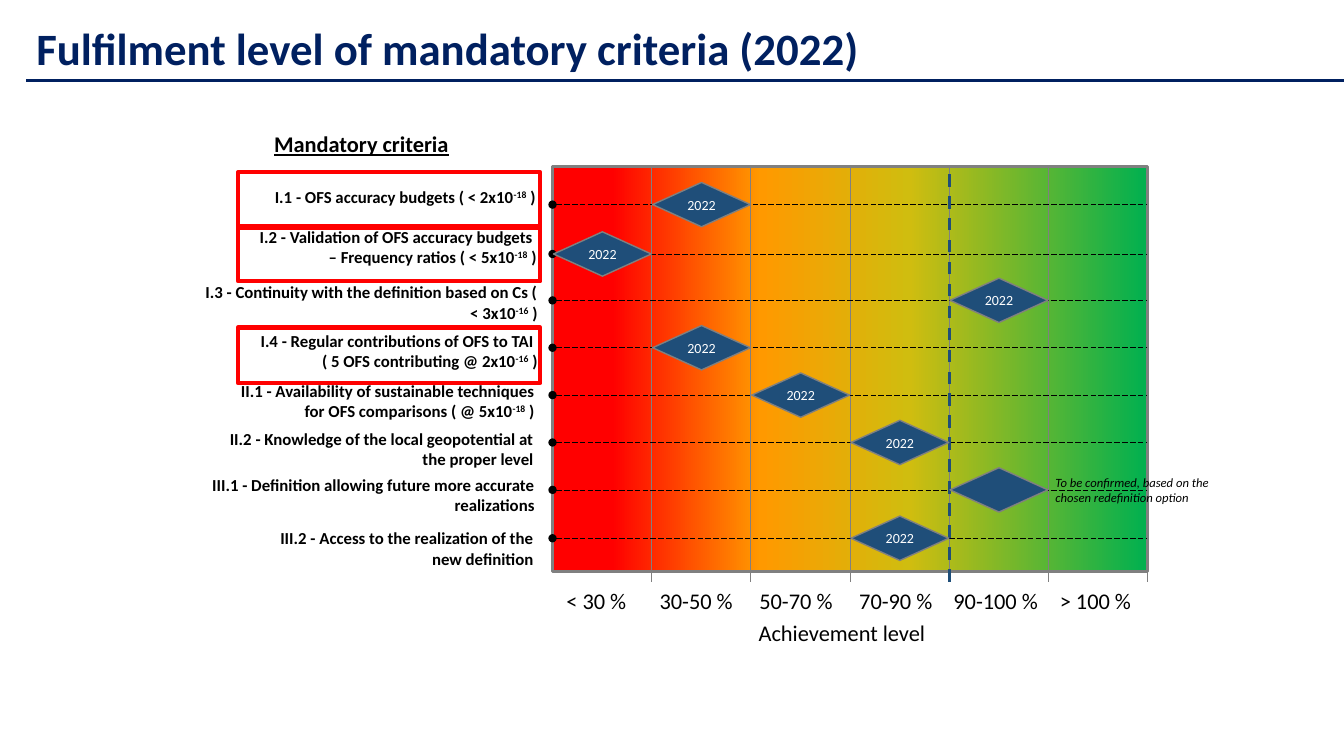
from dataclasses import dataclass

from lxml.etree import SubElement
from pptx import Presentation
from pptx.dml.color import RGBColor
from pptx.enum.dml import MSO_LINE
from pptx.enum.shapes import MSO_CONNECTOR, MSO_SHAPE
from pptx.enum.text import MSO_ANCHOR, PP_ALIGN
from pptx.oxml.ns import qn
from pptx.util import Inches, Pt


@dataclass(frozen=True)
class Theme:
    font: str = "Calibri"
    navy: str = "002060"
    black: str = "000000"
    white: str = "FFFFFF"
    gray: str = "808080"
    blue: str = "1F4E79"
    red: str = "FF0000"
    scale: tuple = ((10, "FF0000"), (35, "FF9900"), (60, "D0BD0F"), (100, "00B050"))
    title: int = 32
    head: int = 16
    label: int = 12
    mark: int = 10
    note: int = 9


THEME = Theme()
LEFT, TOP, WIDTH, HEIGHT = 5.48, 1.65, 5.9, 4.02
RIGHT, TICK = LEFT + WIDTH, 5.77
LEVELS = ["< 30 %", "30-50 %", "50-70 %", "70-90 %", "90-100 %", "> 100 %"]
STEP = WIDTH / len(LEVELS)
GOAL = 4
MARK_W, MARK_H = 0.97, 0.44
RED_TOPS = [1.71, 2.24, 3.25]

ROWS = [
    ([["I.1 - OFS accuracy budgets ( < 2x10", "^-18", " )"]],
     (2.53, 1.8, 2.88, 0.3), 2.03, 1, "2022"),
    ([["I.2 - Validation of OFS accuracy budgets "],
      ["– Frequency ratios ( < 5x10", "^-18", " )"]],
     (0.38, 2.2, 5.04, 0.64), 2.52, 0, "2022"),
    ([["I.3 - Continuity with the definition based on Cs ( < 3x10", "^-16", " )"]],
     (1.92, 2.75, 3.51, 0.5), 2.98, 4, "2022"),
    ([["I.4 - Regular contributions of OFS to TAI "],
      ["( 5 OFS contributing @ 2x10", "^-16", " )"]],
     (0.7, 3.23, 4.73, 0.71), 3.45, 1, "2022"),
    ([["II.1 - Availability of sustainable techniques for OFS comparisons ( @ 5x10",
       "^-18", " )"]],
     (2.2, 3.73, 3.2, 0.5), 3.92, 2, "2022"),
    ([["II.2 - Knowledge of the local geopotential at the proper level"]],
     (2.18, 4.2, 3.21, 0.5), 4.39, 3, "2022"),
    ([["III.1 - Definition allowing future more accurate realizations"]],
     (1.29, 4.66, 4.11, 0.5), 4.86, 4, ""),
    ([["III.2 - Access to the realization of the new definition"]],
     (2.43, 5.19, 2.96, 0.5), 5.34, 3, "2022"),
]


def color(code):
    return RGBColor.from_string(code)


def add_run(para, text, size, shade, bold=False, slant=False, under=False):
    run = para.add_run()
    run.text = text.lstrip("^")
    font = run.font
    font.name, font.size = THEME.font, Pt(size)
    font.bold, font.italic, font.underline = bold, slant, under
    font.color.rgb = color(shade)
    if text.startswith("^"):
        run._r.get_or_add_rPr().set("baseline", "30000")


def add_text(slide, spot, paras, size, align=PP_ALIGN.LEFT, **style):
    frame = slide.shapes.add_textbox(*map(Inches, spot)).text_frame
    frame.word_wrap = True
    for rank, parts in enumerate(paras):
        para = frame.add_paragraph() if rank else frame.paragraphs[0]
        para.alignment = align
        for part in parts:
            add_run(para, part, size, THEME.black, **style)


def add_form(slide, kind, spot, fill=None, line=None, width=1):
    form = slide.shapes.add_shape(kind, *map(Inches, spot))
    form.shadow.inherit = False
    if fill:
        form.fill.solid()
        form.fill.fore_color.rgb = color(fill)
    else:
        form.fill.background()
    if line:
        form.line.color.rgb = color(line)
        form.line.width = Pt(width)
    else:
        form.line.fill.background()
    return form


def add_scale(slide):
    form = add_form(slide, MSO_SHAPE.RECTANGLE, (LEFT, TOP, WIDTH, HEIGHT))
    form.fill.gradient()
    form.fill.gradient_angle = 0
    stops = form._element.spPr.find(qn("a:gradFill")).find(qn("a:gsLst"))
    for stop in list(stops):
        stops.remove(stop)
    for spot, code in THEME.scale:
        stop = SubElement(stops, qn("a:gs"), pos=str(spot * 1000))
        SubElement(stop, qn("a:srgbClr"), val=code)


def add_line(slide, start, end, code, width, dash=None, dot=False):
    line = slide.shapes.add_connector(
        MSO_CONNECTOR.STRAIGHT, *map(Inches, (*start, *end)))
    line.line.color.rgb = color(code)
    line.line.width = Pt(width)
    if dash:
        line.line.dash_style = dash
    props = line._element.spPr
    if dot:
        SubElement(props.find(qn("a:ln")), qn("a:headEnd"), type="oval")
    SubElement(props, qn("a:effectLst"))
    return line


def add_title(slide):
    title = slide.shapes.title
    title.left, title.top = Inches(0.26), Inches(0.16)
    title.width, title.height = Inches(12.89), Inches(0.64)
    frame = title.text_frame
    frame.vertical_anchor = MSO_ANCHOR.TOP
    para = frame.paragraphs[0]
    para.alignment = PP_ALIGN.LEFT
    add_run(para, "Fulfilment level of mandatory criteria (2022)",
            THEME.title, THEME.navy, bold=True)
    add_line(slide, (0.26, 0.8), (13.33, 0.8), THEME.navy, 2.25)


def add_grid(slide):
    add_scale(slide)
    frame = add_form(slide, MSO_SHAPE.RECTANGLE, (LEFT, TOP, WIDTH, HEIGHT),
                     line=THEME.gray, width=2.25)
    for rank, level in enumerate(LEVELS):
        edge = LEFT + STEP * (rank + 1)
        line = add_line(slide, (edge, TICK), (edge, TOP), THEME.gray, 0.5)
        if 2 * (rank + 1) == len(LEVELS):
            line.end_connect(frame, 0)
        add_text(slide, (5.33 + 0.99 * rank, 5.78, 1.17, 0.37), [[level]],
                 THEME.head, PP_ALIGN.CENTER)
    add_text(slide, (6.94, 6.09, 2.82, 0.37), [["Achievement level"]],
             THEME.head, PP_ALIGN.CENTER)


def add_mark(slide, col, mid, text):
    spot = (LEFT + STEP * col + 0.01, mid - MARK_H / 2, MARK_W, MARK_H)
    form = add_form(slide, MSO_SHAPE.FLOWCHART_DECISION, spot,
                    THEME.blue, THEME.gray)
    if text:
        frame = form.text_frame
        frame.margin_left = frame.margin_right = Inches(0)
        frame.margin_top = frame.margin_bottom = Inches(0)
        frame.vertical_anchor = MSO_ANCHOR.MIDDLE
        para = frame.paragraphs[0]
        para.alignment = PP_ALIGN.CENTER
        add_run(para, text, THEME.mark, THEME.white)


def main():
    deck = Presentation()
    deck.slide_width, deck.slide_height = Inches(13.33), Inches(7.5)
    slide = deck.slides.add_slide(deck.slide_layouts[5])
    add_title(slide)
    add_text(slide, (2.62, 1.24, 2.82, 0.37), [["Mandatory criteria"]],
             THEME.head, bold=True, under=True)
    add_grid(slide)
    for label, spot, mid, col, text in ROWS:
        add_text(slide, spot, label, THEME.label, PP_ALIGN.RIGHT, bold=True)
        add_line(slide, (LEFT, mid), (RIGHT, mid), THEME.black, 0.5,
                 MSO_LINE.LONG_DASH, dot=True)
    goal = LEFT + STEP * GOAL
    add_line(slide, (goal, TICK), (goal, TOP), THEME.blue, 2.25, MSO_LINE.DASH)
    add_text(slide, (10.37, 4.66, 1.81, 0.4),
             [["To be confirmed, based on the chosen redefinition option"]],
             THEME.note, slant=True)
    for label, spot, mid, col, text in ROWS:
        add_mark(slide, col, mid, text)
    for top in RED_TOPS:
        add_form(slide, MSO_SHAPE.RECTANGLE, (2.36, top, 3, 0.55),
                 line=THEME.red, width=3)
    deck.save("out.pptx")


if __name__ == "__main__":
    main()
